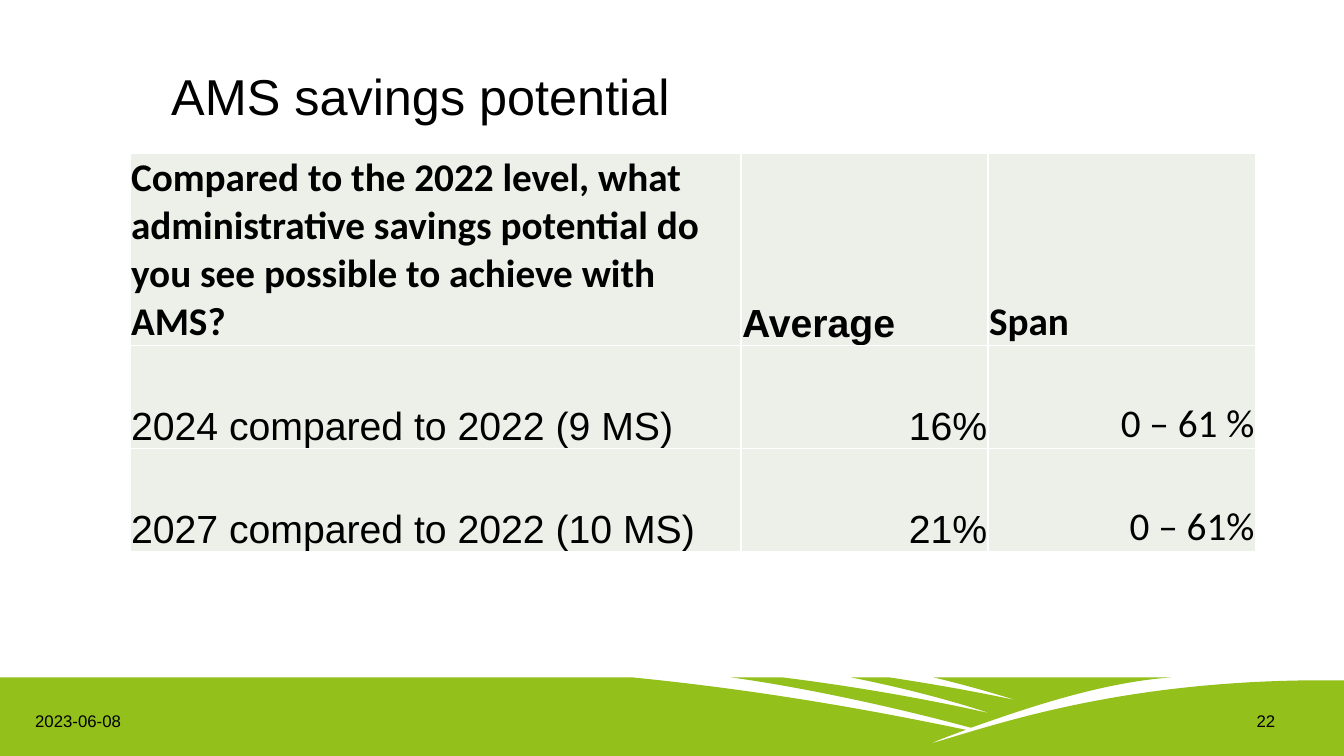
from dataclasses import dataclass

from lxml import etree
from pptx import Presentation
from pptx.dml.color import RGBColor
from pptx.enum import text as t
from pptx.oxml import ns
from pptx.util import Inches, Pt


@dataclass(frozen=True)
class Theme:
    ink: RGBColor = RGBColor(0x00, 0x00, 0x00)
    field: RGBColor = RGBColor(0x93, 0xC0, 0x1B)
    cell: RGBColor = RGBColor(0xEC, 0xF0, 0xE8)
    sans: str = "Arial"
    table_font: str = "Calibri"
    title_size: int = 36
    table_size: int = 28
    footer_size: int = 12


THEME = Theme()
LEFT, CENTER, RIGHT = t.PP_ALIGN.LEFT, t.PP_ALIGN.CENTER, t.PP_ALIGN.RIGHT

# Field outlines, relative to the band's top left corner.
# Two numbers make a straight edge, six make a Bezier curve.
FURROWS = [
    (9.26, 0), (9.55, 0.07, 9.8, 0.14, 10.09, 0.23),
    (10.09, 0.23, 9.61, 0.12, 8.82, 0), (8.44, 0),
    (8.89, 0.09, 9.38, 0.21, 9.83, 0.36),
    (9.83, 0.36, 8.96, 0.15, 7.76, 0), (7.25, 0),
    (7.91, 0.09, 8.82, 0.28, 9.63, 0.5),
    (10.14, 0.32, 10.91, 0.05, 11.62, 0),
]
GROUND = [
    (9.58, 0.52), (9.18, 0.44, 7.89, 0.16, 6.27, 0),
    (0, 0), (0, 0.78), (13.33, 0.78), (13.33, 0.03),
    (11.19, 0, 9.91, 0.46, 9.22, 0.66),
    (9.41, 0.58, 9.45, 0.57, 9.58, 0.52),
]

TABLE_ROWS = [
    ("Compared to the 2022 level, what administrative savings potential "
     "do you see possible to achieve with AMS?", "Average", "Span"),
    ("2024 compared to 2022 (9 MS)", "16%", "0 – 61 %"),
    ("2027 compared to 2022 (10 MS)", "21%", "0 – 61%"),
]


def write(frame, words, size, font, align=LEFT, bold=False):
    frame.word_wrap = True
    frame.text = words
    paragraph = frame.paragraphs[0]
    paragraph.alignment = align
    for run in paragraph.runs:
        run.font.size, run.font.name, run.font.bold = Pt(size), font, bold
        run.font.color.rgb = THEME.ink
    return paragraph


def bend_edges(band, edges):
    """Replace the straight edges that have control points by curves."""
    straight_edges = list(band._element.iter(ns.qn("a:lnTo")))
    for straight, edge in zip(straight_edges, edges):
        if len(edge) == 2:
            continue
        curve = etree.Element(ns.qn("a:cubicBezTo"))
        for x, y in zip(edge[::2], edge[1::2]):
            etree.SubElement(curve, ns.qn("a:pt"),
                             x=str(Inches(x)), y=str(Inches(y)))
        straight.getparent().replace(straight, curve)


def add_field_band(slide, left, top):
    outlines = (FURROWS, GROUND)
    corners = [[(Inches(left + edge[-2]), Inches(top + edge[-1])) for edge in outline]
               for outline in outlines]
    builder = slide.shapes.build_freeform(*corners[0][0])
    for number, contour in enumerate(corners):
        if number:
            builder.move_to(*contour[0])
        builder.add_line_segments(contour[1:], close=True)
    band = builder.convert_to_shape()
    bend_edges(band, [edge for outline in outlines for edge in outline[1:]])
    band.shadow.inherit = False
    band.fill.solid()
    band.fill.fore_color.rgb = THEME.field
    band.line.fill.background()


def add_title(slide, left, top, width, height):
    frame = slide.shapes.add_textbox(
        Inches(left), Inches(top), Inches(width), Inches(height)).text_frame
    frame.vertical_anchor = t.MSO_ANCHOR.BOTTOM
    write(frame, "AMS savings potential", THEME.title_size, THEME.sans).line_spacing = 0.9


def add_savings_table(slide, left, top, column_widths, row_heights):
    table = slide.shapes.add_table(
        len(row_heights), len(column_widths), Inches(left), Inches(top),
        Inches(sum(column_widths)), Inches(sum(row_heights))).table
    table.first_row = table.horz_banding = False
    for column, width in zip(table.columns, column_widths):
        column.width = Inches(width)
    for row, height in zip(table.rows, row_heights):
        row.height = Inches(height)

    for r, row_words in enumerate(TABLE_ROWS):
        for c, words in enumerate(row_words):
            cell = table.cell(r, c)
            cell.fill.solid()
            cell.fill.fore_color.rgb = THEME.cell
            cell.vertical_anchor = t.MSO_ANCHOR.BOTTOM
            cell.margin_left = cell.margin_right = cell.margin_top = Inches(0.01)
            cell.margin_bottom = 0
            is_header = r == 0
            uses_table_font = c == 2 or (is_header and c == 0)
            write(cell.text_frame, words, THEME.table_size,
                  THEME.table_font if uses_table_font else THEME.sans,
                  LEFT if is_header or c == 0 else RIGHT, is_header)


def add_footer(slide, left, top, width, height):
    label_width = 1.55
    for x, words in ((left, "2023-06-08"), (left + width - label_width, "22")):
        frame = slide.shapes.add_textbox(
            Inches(x), Inches(top), Inches(label_width), Inches(height)).text_frame
        frame.vertical_anchor = t.MSO_ANCHOR.MIDDLE
        write(frame, words, THEME.footer_size, THEME.sans, CENTER)


def main():
    deck = Presentation()
    deck.slide_width, deck.slide_height = Inches(13.33), Inches(7.5)
    slide = deck.slides.add_slide(deck.slide_layouts[6])
    add_field_band(slide, 0, 6.72)
    add_title(slide, 1.6, 0, 10.24, 1.3)
    add_savings_table(slide, 1.29, 1.52, (6.06, 2.45, 2.65), (1.91, 1.02, 1.02))
    add_footer(slide, 0, 6.95, 13.33, 0.4)
    deck.save("out.pptx")


if __name__ == "__main__":
    main()
